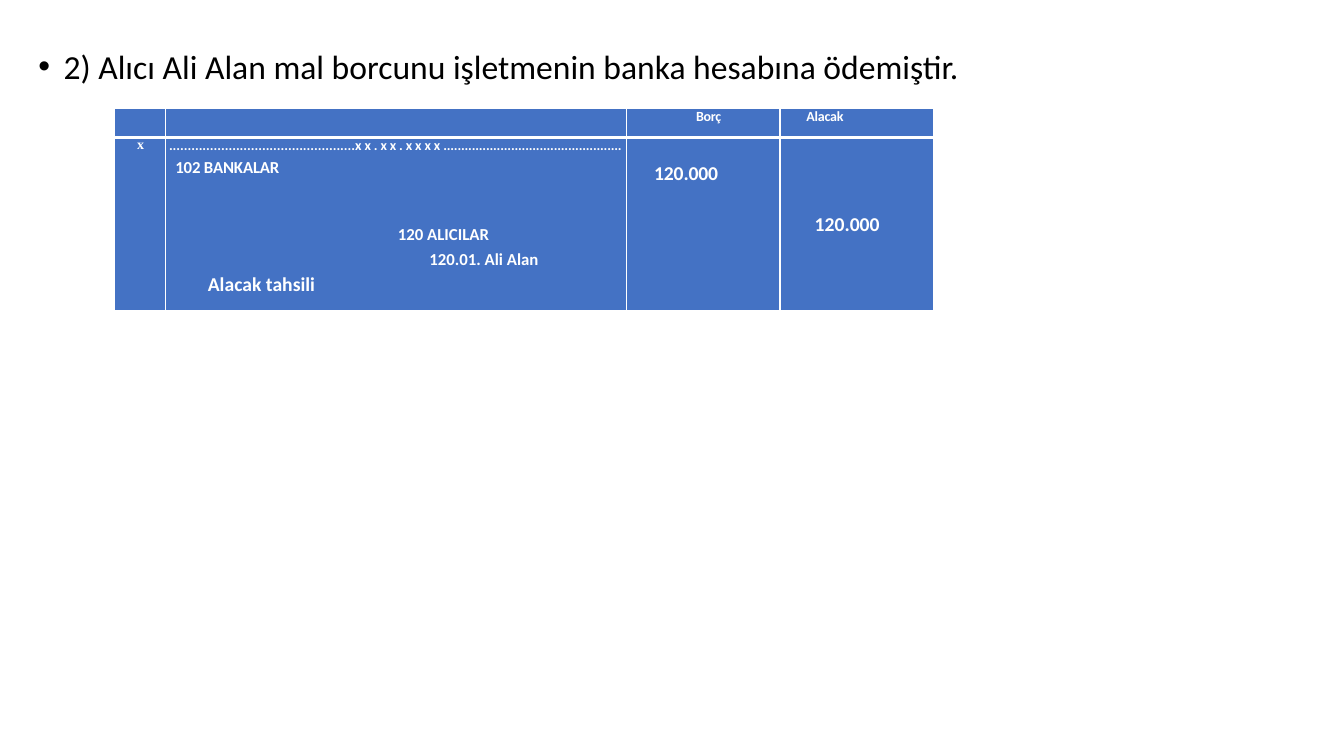
import dataclasses

import lxml.etree
import pptx
import pptx.dml.color
import pptx.enum.text
import pptx.oxml.ns
import pptx.util

EMU_PER_PX = 9525


@dataclasses.dataclass(frozen=True)
class Theme:
    font: str = "Calibri"
    marker_font: str = "Times New Roman"
    black: str = "000000"
    white: str = "FFFFFF"
    blue: str = "4472C4"
    headline: int = 24
    amount: int = 14
    account: int = 12
    small: int = 10
    thin: int = 1
    thick: int = 3


THEME = Theme()


@dataclasses.dataclass(frozen=True)
class Piece:
    text: str
    tracking: float = 0


@dataclasses.dataclass(frozen=True)
class Line:
    pieces: tuple[Piece, ...]
    size: int = THEME.small
    indent: int = 0
    before: float = 0
    centered: bool = False
    font: str = THEME.font


@dataclasses.dataclass(frozen=True)
class Entry:
    lines: tuple[Line, ...] = ()
    top: int = 0


DOTS = "." * 50
COLUMN_WIDTHS = (49, 439, 146, 146)
ROW_HEIGHTS = (28, 165)
JOURNAL = (
    (
        Entry(),
        Entry(),
        Entry((Line((Piece("Borç", -0.2),), indent=10, centered=True),)),
        Entry((Line((Piece("Alacak", -0.1),), indent=25),)),
    ),
    (
        Entry((Line((Piece("x", -0.5),), indent=1, centered=True, font=THEME.marker_font),)),
        Entry((
            Line((Piece(DOTS), Piece("xx.xx.xxxx", 2.1), Piece(DOTS, -0.1)), indent=3),
            Line((Piece("102 BANKALAR", -0.1),), THEME.account, 9, 2.5),
            Line((Piece("120 ALICILAR"),), THEME.account, 221, 33),
            Line((Piece("120.01. Ali Alan"),), THEME.account, 251, 3),
            Line((Piece("Alacak tahsili"),), THEME.amount, 40, 2.5),
        )),
        Entry((Line((Piece("120.000", -0.1),), THEME.amount, 26),), top=23),
        Entry((Line((Piece("120.000"),), THEME.amount, 33),), top=72),
    ),
)


def px(length: int) -> pptx.util.Emu:
    return pptx.util.Emu(length * EMU_PER_PX)


def add_element(parent, tag: str, **attributes: str):
    element = lxml.etree.SubElement(parent, pptx.oxml.ns.qn(tag))
    for name, value in attributes.items():
        element.set(name, value)
    return element


def style_font(paragraph, name: str, size: int, color: str, bold: bool) -> None:
    paragraph.font.name = name
    paragraph.font.size = pptx.util.Pt(size)
    paragraph.font.bold = bold
    paragraph.font.color.rgb = pptx.dml.color.RGBColor.from_string(color)


def write_line(paragraph, line: Line) -> None:
    paragraph._p.get_or_add_pPr().set("marL", str(px(line.indent)))
    paragraph.space_before = pptx.util.Pt(line.before)
    if line.centered:
        paragraph.alignment = pptx.enum.text.PP_ALIGN.CENTER
    style_font(paragraph, line.font, line.size, THEME.white, True)
    for piece in line.pieces:
        run = paragraph.add_run()
        run.text = piece.text
        run._r.get_or_add_rPr().set("spc", str(round(piece.tracking * 100)))


def fill_cell(cell, entry: Entry, row_index: int) -> None:
    cell.margin_left = cell.margin_right = cell.margin_bottom = 0
    cell.margin_top = px(entry.top)
    top, bottom = (THEME.thin, THEME.thick) if row_index == 0 else (THEME.thick, THEME.thin)
    borders = {"a:lnL": THEME.thin, "a:lnR": THEME.thin, "a:lnT": top, "a:lnB": bottom}
    properties = cell._tc.get_or_add_tcPr()
    for tag, width in borders.items():
        border = add_element(properties, tag, w=str(pptx.util.Pt(width)))
        add_element(add_element(border, "a:solidFill"), "a:srgbClr", val=THEME.white)
    cell.fill.solid()
    cell.fill.fore_color.rgb = pptx.dml.color.RGBColor.from_string(THEME.blue)
    frame = cell.text_frame
    for index, line in enumerate(entry.lines):
        write_line(frame.paragraphs[0] if index == 0 else frame.add_paragraph(), line)
    if not entry.lines:
        add_element(frame.paragraphs[0]._p, "a:endParaRPr", sz=str(THEME.small * 100))


def add_headline(slide) -> None:
    title = slide.shapes.title
    title.element.getparent().remove(title.element)
    body = slide.placeholders[1]
    body.left, body.top, body.width, body.height = map(px, (27, 43, 1225, 657))
    paragraph = body.text_frame.paragraphs[0]
    paragraph.text = "2) Alıcı Ali Alan mal borcunu işletmenin banka hesabına ödemiştir."
    paragraph.line_spacing = 0.9
    paragraph.space_before = pptx.util.Pt(0)
    properties = paragraph._p.get_or_add_pPr()
    properties.set("marL", str(px(24)))
    properties.set("indent", str(-px(24)))
    add_element(properties, "a:buFont", typeface="Arial")
    add_element(properties, "a:buChar", char="•")
    style_font(paragraph, THEME.font, THEME.headline, THEME.black, False)


def add_journal(slide) -> None:
    table = slide.shapes.add_table(
        len(ROW_HEIGHTS), len(COLUMN_WIDTHS),
        px(109), px(103), px(sum(COLUMN_WIDTHS)), px(sum(ROW_HEIGHTS)),
    ).table
    for column, width in zip(table.columns, COLUMN_WIDTHS):
        column.width = px(width)
    for row, height in zip(table.rows, ROW_HEIGHTS):
        row.height = px(height)
    for row_index, entries in enumerate(JOURNAL):
        for column_index, entry in enumerate(entries):
            fill_cell(table.cell(row_index, column_index), entry, row_index)


def main() -> None:
    presentation = pptx.Presentation()
    presentation.slide_width = px(1280)
    presentation.slide_height = px(720)
    slide = presentation.slides.add_slide(presentation.slide_layouts[1])
    add_headline(slide)
    add_journal(slide)
    presentation.save("out.pptx")


if __name__ == "__main__":
    main()
